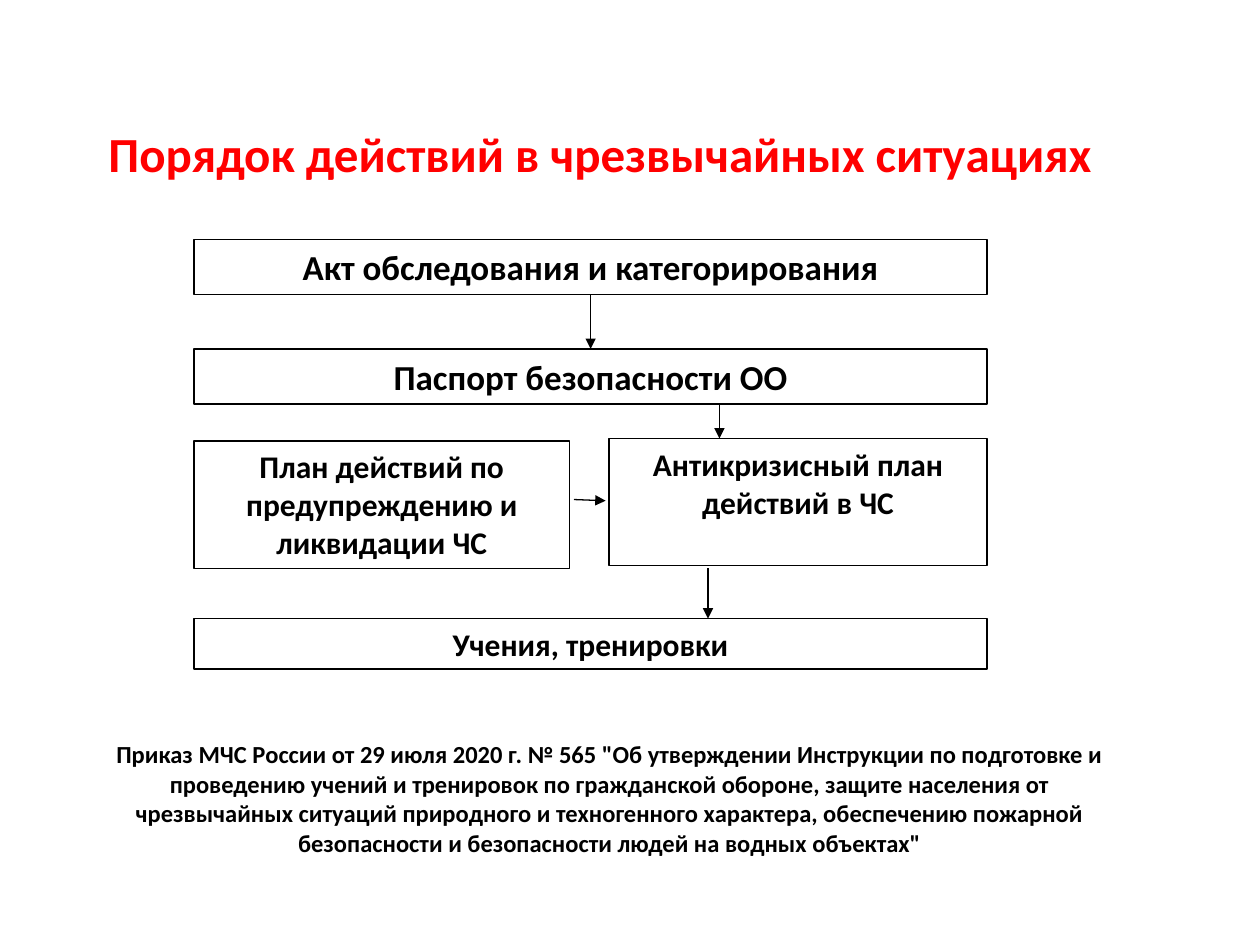
from dataclasses import dataclass

from lxml.etree import SubElement
from pptx import Presentation
from pptx.dml.color import RGBColor
from pptx.enum.shapes import MSO_CONNECTOR as Connector, MSO_SHAPE as Shape
from pptx.enum.text import MSO_ANCHOR as Anchor, MSO_AUTO_SIZE as AutoSize, PP_ALIGN as Align
from pptx.oxml.ns import qn
from pptx.util import Pt


@dataclass(frozen=True)
class Theme:
    """Colours, font and type sizes of the slide."""
    font: str = "Calibri"
    accent: RGBColor = RGBColor(255, 0, 0)
    ink: RGBColor = RGBColor(0, 0, 0)
    title: int = 28
    stage: int = 20
    plan: int = 18
    note: int = 14
    line: float = 0.75


THEME = Theme()


def place(shape, box):
    """Move a shape to a box of left, top, width and height in points."""
    shape.left, shape.top, shape.width, shape.height = (Pt(value) for value in box)


def write_text(shape, text, size, color=THEME.ink, bold=True, align=Align.CENTER):
    """Fill a shape with one formatted paragraph."""
    frame = shape.text_frame
    frame.word_wrap = True
    frame.auto_size = AutoSize.NONE
    frame.vertical_anchor = Anchor.TOP
    frame.text = text
    paragraph = frame.paragraphs[0]
    paragraph.alignment = align
    font = paragraph.runs[0].font
    font.name, font.size, font.bold = THEME.font, Pt(size), bold
    font.color.rgb = color


def add_stage(slide, box, text, size):
    """Add an outlined box for one stage of the procedure."""
    shape = slide.shapes.add_shape(Shape.RECTANGLE, *(Pt(value) for value in box))
    shape.shadow.inherit = False
    shape.fill.background()
    shape.line.color.rgb = THEME.ink
    shape.line.width = Pt(THEME.line)
    write_text(shape, text, size)


def add_arrow(slide, start, end):
    """Add a straight arrow between two points."""
    arrow = slide.shapes.add_connector(Connector.STRAIGHT, *(Pt(value) for value in start + end))
    arrow.line.color.rgb = THEME.ink
    arrow.line.width = Pt(THEME.line)
    SubElement(arrow.line._get_or_add_ln(), qn("a:tailEnd"), type="triangle")
    SubElement(arrow._element.spPr, qn("a:effectLst"))


def add_title(slide, box):
    """Place the heading in the title placeholder."""
    title = slide.shapes.title
    place(title, box)
    write_text(title, "Порядок действий в чрезвычайных ситуациях", THEME.title, THEME.accent)


def add_procedure(slide, box):
    """Draw the stages and the arrows that join them."""
    left, top, width, height = box
    stage_height, plan_height, drill_height = 31.5, 72.7, 28.8
    passport_top, plan_top = top + 62.6, top + 115.2
    crisis_top = plan_top - 1.4
    drill_top = top + height - drill_height
    plan_width, crisis_width = 214.6, 216
    crisis_left = left + width - crisis_width

    stages = [
        ((left, top, width, stage_height), "Акт обследования и категорирования", THEME.stage),
        ((left, passport_top, width, stage_height), "Паспорт безопасности ОО", THEME.stage),
        ((left, plan_top, plan_width, plan_height),
         "План действий по предупреждению и ликвидации ЧС", THEME.plan),
        ((crisis_left, crisis_top, crisis_width, plan_height),
         "Антикризисный план действий в ЧС", THEME.plan),
        ((left, drill_top, width, drill_height), "Учения, тренировки", THEME.plan),
    ]
    for stage_box, text, size in stages:
        add_stage(slide, stage_box, text, size)

    drops = [
        (left + width / 2, top + stage_height, passport_top),
        (left + 300.2, passport_top + stage_height, crisis_top),
        (left + 293.7, plan_top + plan_height, drill_top),
    ]
    for x, start, end in drops:
        add_arrow(slide, (x, start), (x, end))
    middle = crisis_top + plan_height / 2 - 1.5
    add_arrow(slide, (left + plan_width + 2.5, middle), (crisis_left - 2, middle + 0.7))


def add_note(slide, box):
    """Add the reference to the governing order."""
    note = slide.shapes.add_textbox(*(Pt(value) for value in box))
    write_text(
        note,
        'Приказ МЧС России от 29 июля 2020 г. № 565 "Об утверждении Инструкции по подготовке '
        "и проведению учений и тренировок по гражданской обороне, защите населения от "
        "чрезвычайных ситуаций природного и техногенного характера, обеспечению пожарной "
        'безопасности и безопасности людей на водных объектах"',
        THEME.note,
    )


def main():
    """Build and save the slide."""
    presentation = Presentation()
    presentation.slide_width, presentation.slide_height = Pt(720), Pt(540)
    slide = presentation.slides.add_slide(presentation.slide_layouts[5])
    add_title(slide, (41, 67, 603.4, 41))
    add_procedure(slide, (110.9, 136.8, 453.2, 245.5))
    add_note(slide, (51.8, 419, 593.3, 74.9))
    presentation.save("out.pptx")


if __name__ == "__main__":
    main()
